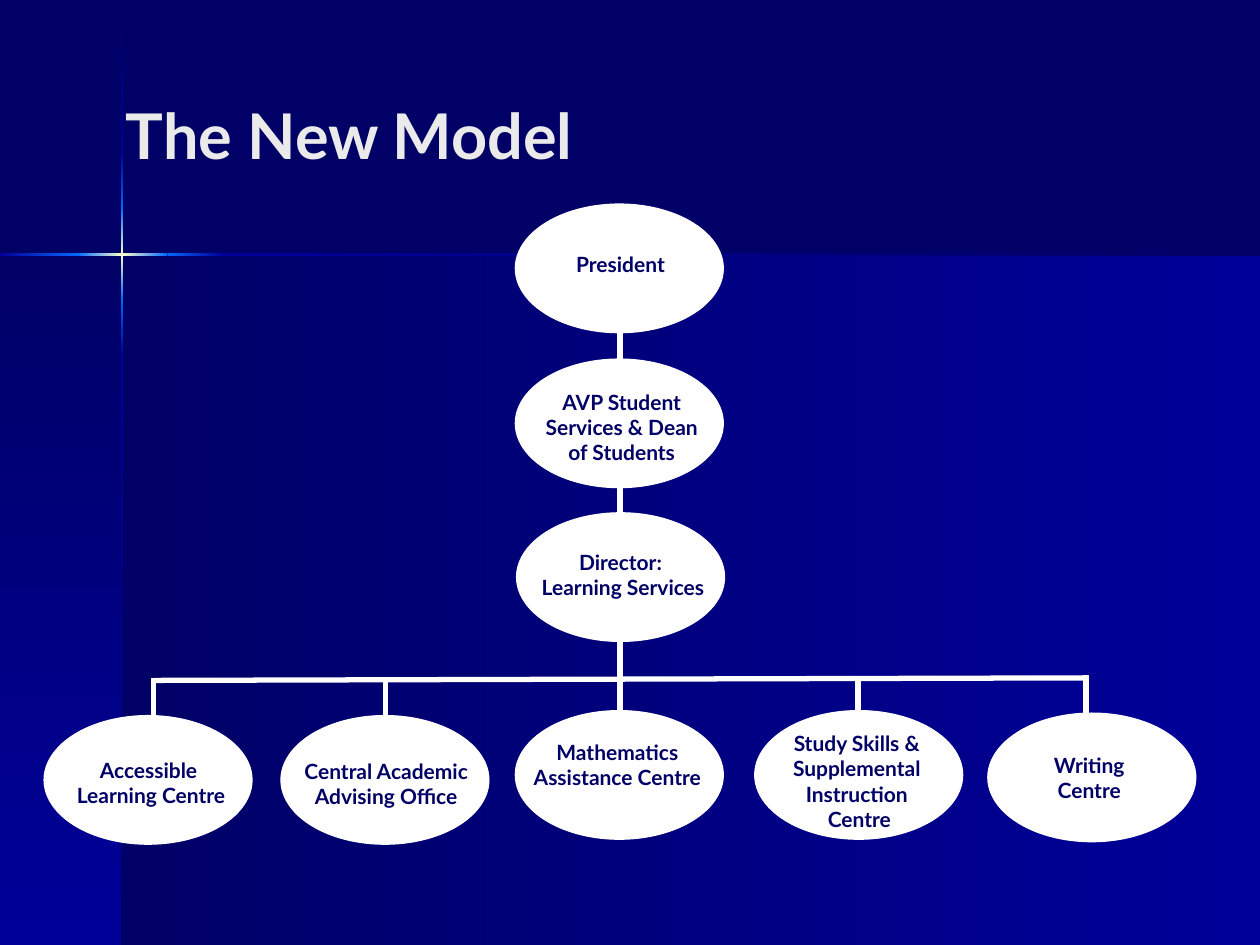
from pptx import Presentation
from pptx.dml.color import RGBColor
from pptx.enum.shapes import MSO_CONNECTOR, MSO_SHAPE
from pptx.enum.text import MSO_ANCHOR, PP_ALIGN
from pptx.oxml.ns import qn
from pptx.util import Inches, Pt
from lxml import etree

RECT, OVAL = MSO_SHAPE.RECTANGLE, MSO_SHAPE.OVAL
STRAIGHT = MSO_CONNECTOR.STRAIGHT
LEFT, CENTER = PP_ALIGN.LEFT, PP_ALIGN.CENTER
TOP, MIDDLE = MSO_ANCHOR.TOP, MSO_ANCHOR.MIDDLE

COLORS = {
    "navy": "000066",
    "royal": "000099",
    "bright": "0066FF",
    "cream": "FFFFCC",
    "white": "FFFFFF",
    "title": "EAEAEA",
}
RGB = {name: RGBColor.from_string(value) for name, value in COLORS.items()}

prs = Presentation()
prs.slide_width, prs.slide_height = Inches(10), Inches(7.5)
s = prs.slides.add_slide(prs.slide_layouts[6])
s.background.fill.solid()
s.background.fill.fore_color.rgb = RGB["navy"]


def add_gradient(x, y, w, h, start, end, angle=0):
    """Rectangle shading from start to end; angle is counter-clockwise."""
    sp = s.shapes.add_shape(RECT, Inches(x), Inches(y), Inches(w), Inches(h))
    sp.shadow.inherit = False
    sp.line.fill.background()
    sp.fill.gradient()
    sp.fill.gradient_angle = angle
    for stop, position, color in zip(sp.fill.gradient_stops, (0, 1), (start, end)):
        stop.position = position
        stop.color.rgb = RGB[color]


def add_text(text, x, y, w, h, size=12, color="navy", align=CENTER, anchor=TOP):
    tf = s.shapes.add_textbox(Inches(x), Inches(y), Inches(w), Inches(h)).text_frame
    tf.word_wrap = True
    tf.vertical_anchor = anchor
    tf.text = text
    for p in tf.paragraphs:
        p.alignment = align
        for r in p.runs:
            r.font.name = "Lato"
            r.font.size = Pt(size)
            r.font.bold = True
            r.font.color.rgb = RGB[color]


# Background panels and the glowing cross where they meet
CROSS_X, CROSS_Y, BEAM = 0.97, 2.02, 0.02
DOWN = 270
add_gradient(CROSS_X, CROSS_Y, 9.03, 5.48, "navy", "royal")
add_gradient(0, CROSS_Y, CROSS_X, 5.48, "navy", "royal", DOWN)

vertical_beam = [(0.01, "navy"), (1.21, "royal"), (1.65, "bright"), (CROSS_Y, "cream"),
                 (2.38, "bright"), (2.82, "royal"), (7.5, "navy")]
for (y1, start), (y2, end) in zip(vertical_beam, vertical_beam[1:]):
    add_gradient(CROSS_X - BEAM / 2, y1, BEAM, y2 - y1, start, end, DOWN)

horizontal_beam = [(0, "royal"), (0.61, "bright"), (CROSS_X, "cream"),
                   (1.33, "bright"), (1.77, "royal"), (10, "navy")]
for (x1, start), (x2, end) in zip(horizontal_beam, horizontal_beam[1:]):
    add_gradient(x1, CROSS_Y - BEAM / 2, x2 - x1, BEAM, start, end)

add_text("The New Model", 0.9, 0.28, 9.69, 1.57, size=36, color="title",
         align=LEFT, anchor=MIDDLE)

# Lines of the chart: trunk, crossbar, then the drops to the outer centres
lines = [
    (4.92, 1.94, 4.92, 5.64),
    (1.22, 5.4, 8.62, 5.38),
    (1.22, 5.38, 1.22, 5.7),
    (3.06, 5.4, 3.06, 5.72),
    (6.81, 5.4, 6.81, 5.72),
    (8.62, 5.36, 8.62, 5.75),
]
for line in lines:
    cx = s.shapes.add_connector(STRAIGHT, *map(Inches, line))
    cx.line.color.rgb = RGB["white"]
    cx.line.width = Pt(3)
    etree.SubElement(cx._element.spPr, qn("a:effectLst"))

# Each unit: oval position, label, label box
units = [
    (4.09, 1.62, "President", (3.9, 1.95, 2.05, 0.3)),
    (4.09, 2.85, "AVP Student Services & Dean of Students", (4.15, 3.04, 1.57, 0.7)),
    (4.1, 4.07, "Director:\n Learning Services", (3.94, 4.31, 1.97, 0.5)),
    (0.35, 5.68, "Accessible \nLearning Centre", (0.43, 5.96, 1.54, 0.5)),
    (2.23, 5.68, "Central Academic Advising Office", (2.07, 5.97, 1.99, 0.5)),
    (4.09, 5.64, "Mathematics Assistance Centre", (4.06, 5.82, 1.68, 0.5)),
    (5.99, 5.64, "Study Skills & Supplemental Instruction\n Centre", (5.79, 5.75, 2.02, 0.9)),
    (7.84, 5.66, "Writing Centre", (8.12, 5.92, 1.05, 0.5)),
]
for x, y, label, box in units:
    sp = s.shapes.add_shape(OVAL, Inches(x), Inches(y), Inches(1.65), Inches(1.02))
    sp.shadow.inherit = False
    sp.fill.solid()
    sp.fill.fore_color.rgb = RGB["white"]
    sp.line.color.rgb = RGB["white"]
    sp.line.width = Pt(0.75)
    add_text(label, *box)

prs.save("out.pptx")
